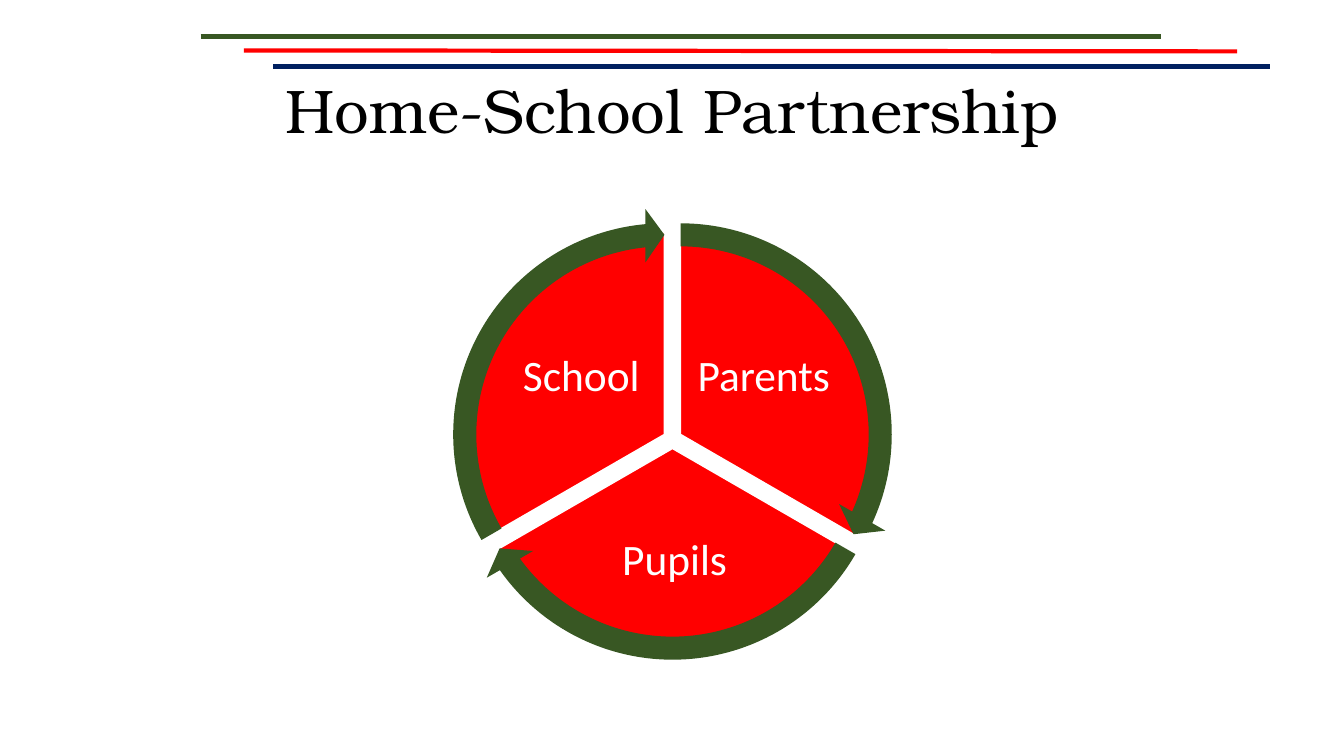
from pptx import Presentation
from pptx import util as u
from pptx.dml.color import RGBColor
from pptx.enum import shapes, text
from pptx.oxml.ns import qn
from lxml import etree

GREEN, RED, NAVY, WHITE = "385723", "FF0000", "002060", "FFFFFF"
PIE_SIZE, ARROW_SIZE = 4, 4.49
DEGREE = 0.6  # adjustment units per degree


def rgb(value):
    return RGBColor.from_string(value)


def add_rule(s, start, end, color, width):
    c = s.shapes.add_connector(shapes.MSO_CONNECTOR.STRAIGHT,
                               *[u.Inches(v) for v in start + end])
    c.line.color.rgb = rgb(color)
    c.line.width = u.Pt(width)
    etree.SubElement(c._element.spPr, qn("a:effectLst"))


def add_text(s, box, content, size, font="Calibri", color=WHITE, inset=(0.04, 0.04)):
    tf = s.shapes.add_textbox(*[u.Inches(v) for v in box]).text_frame
    tf.word_wrap = True
    tf.vertical_anchor = text.MSO_ANCHOR.MIDDLE
    tf.margin_left = tf.margin_right = u.Inches(inset[0])
    tf.margin_top = tf.margin_bottom = u.Inches(inset[1])
    p = tf.paragraphs[0]
    p.alignment = text.PP_ALIGN.CENTER
    p.line_spacing = 0.9
    r = p.add_run()
    r.text = content
    r.font.size = u.Pt(size)
    r.font.name = font
    r.font.color.rgb = rgb(color)


def add_round(s, kind, left, top, size, adjustments, fill, line=None):
    sp = s.shapes.add_shape(kind, *[u.Inches(v) for v in (left, top, size, size)])
    sp.shadow.inherit = False
    for i, value in enumerate(adjustments):
        sp.adjustments[i] = value
    sp.fill.solid()
    sp.fill.fore_color.rgb = rgb(fill)
    if line:
        sp.line.color.rgb = rgb(line)
        sp.line.width = u.Pt(1)
    else:
        sp.line.fill.background()


def add_cycle(s, sectors):
    # Red sectors with their labels
    for left, top, start, label, box in sectors:
        end = (start + 120) % 360
        add_round(s, shapes.MSO_SHAPE.PIE, left, top, PIE_SIZE,
                  (start * DEGREE, end * DEGREE), RED, WHITE)
        add_text(s, box, label, 31)
    # Green arrows, concentric with the sectors
    offset = (ARROW_SIZE - PIE_SIZE) / 2
    for left, top, start, _, _ in sectors:
        tip = (start + 120) % 360 - 5.46
        add_round(s, shapes.MSO_SHAPE.CIRCULAR_ARROW, left - offset, top - offset,
                  ARROW_SIZE, (0.051, 3.275, tip * DEGREE, start * DEGREE, 0.059), GREEN)


def main():
    prs = Presentation()
    prs.slide_width, prs.slide_height = u.Inches(13.33), u.Inches(7.5)
    s = prs.slides.add_slide(prs.slide_layouts[6])

    # Header rules
    add_rule(s, (1.99, 0.36), (11.52, 0.36), GREEN, 3.25)
    add_rule(s, (2.42, 0.5), (12.27, 0.51), RED, 3)
    add_rule(s, (2.71, 0.66), (12.6, 0.66), NAVY, 3)

    # Title
    add_text(s, (0.92, 0.4, 11.5, 1.45), "Home-School Partnership", 44,
             font="TeX Gyre Bonum", color="000000", inset=(0.1, 0.05))

    # Cycle: left, top, start angle, label, label box
    add_cycle(s, [
        (4.75, 2.31, 270, "Parents", (6.86, 3.15, 1.43, 1.19)),
        (4.67, 2.45, 30, "Pupils", (5.62, 5.04, 2.14, 1.05)),
        (4.59, 2.31, 150, "School", (5.05, 3.15, 1.43, 1.19)),
    ])

    prs.save("out.pptx")


if __name__ == "__main__":
    main()
